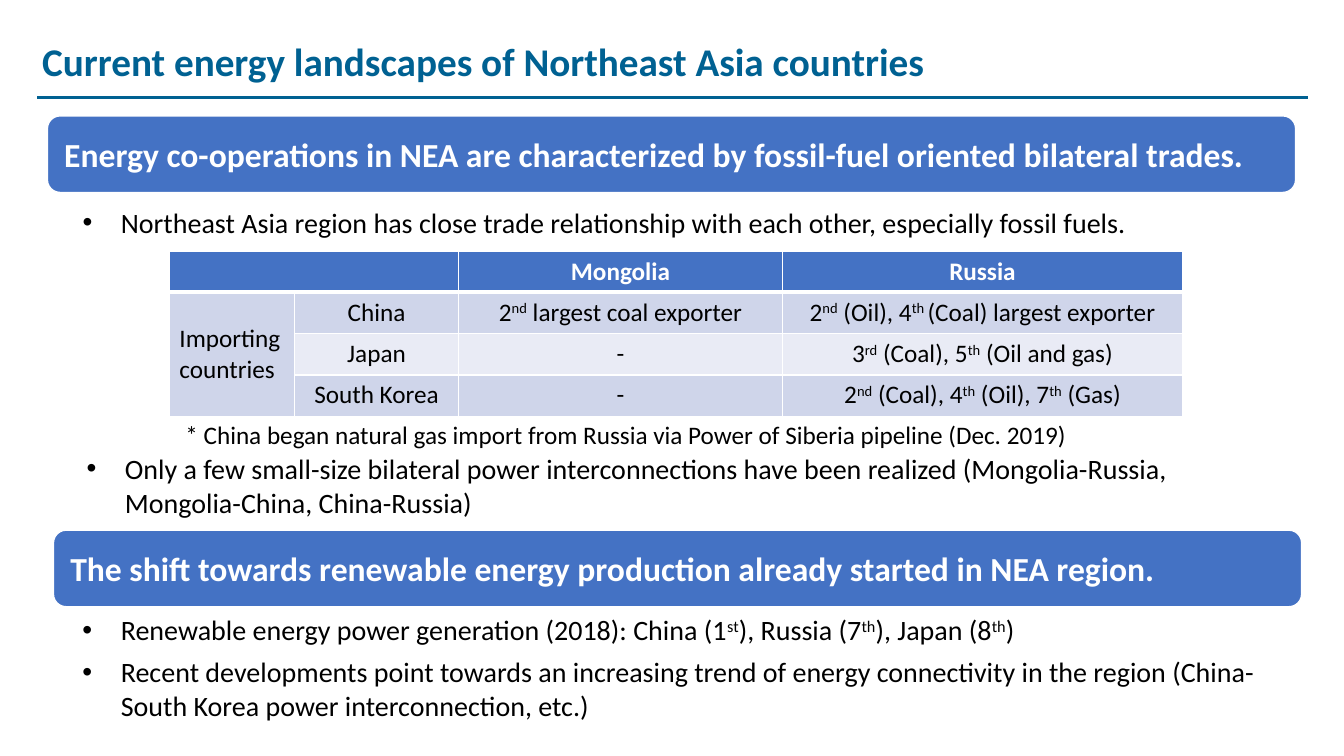
from pptx import Presentation
from pptx.dml.color import RGBColor
from pptx.enum.shapes import MSO_CONNECTOR, MSO_SHAPE
from pptx.enum.text import MSO_ANCHOR, PP_ALIGN
from pptx.oxml import parse_xml
from pptx.oxml.ns import nsdecls, qn
from pptx.util import Inches, Pt
from lxml import etree

TITLE = "Current energy landscapes of Northeast Asia countries"
BANNERS = [
    (0.47, 1.15, "Energy co-operations in NEA are characterized by fossil-fuel oriented bilateral trades."),
    (0.53, 5.26, "The shift towards renewable energy production already started in NEA region."),
]
BULLETS = [
    ((0.72, 1.99, 11.81, 0.47), [
        "Northeast Asia region has close trade relationship with each other, especially fossil fuels.",
    ]),
    ((0.76, 4.43, 11.81, 0.77), [
        "Only a few small-size bilateral power interconnections have been realized "
        "(Mongolia-Russia, Mongolia-China, China-Russia)",
    ]),
    ((0.72, 6.03, 11.96, 1.19), [
        "Renewable energy power generation (2018): China (1^st^), Russia (7^th^), Japan (8^th^)",
        "Recent developments point towards an increasing trend of energy connectivity in the region "
        "(China-South Korea power interconnection, etc.)",
    ]),
]
TRADES = [
    ["", "", "Mongolia", "Russia"],
    ["Importing countries", "China", "2^nd^ largest coal exporter",
     "2^nd^ (Oil), 4^th ^(Coal) largest exporter"],
    ["", "Japan", "-", "3^rd^ (Coal), 5^th^ (Oil and gas)"],
    ["", "South Korea", "-", "2^nd^ (Coal), 4^th^ (Oil), 7^th^ (Gas)"],
]
NOTE = "* China began natural gas import from Russia via Power of Siberia pipeline (Dec. 2019)"
WIDTHS = [1.24, 1.63, 3.21, 3.97]
ROW = 0.41

TEAL = RGBColor(0x00, 0x61, 0x92)
BLUE = RGBColor(0x44, 0x72, 0xC4)
DARK = RGBColor(0xCF, 0xD5, 0xEA)
PALE = RGBColor(0xE9, 0xEB, 0xF5)
WHITE = RGBColor(0xFF, 0xFF, 0xFF)
BLACK = RGBColor(0x00, 0x00, 0x00)
LEFT, CENTER = PP_ALIGN.LEFT, PP_ALIGN.CENTER
MIDDLE, TOP = MSO_ANCHOR.MIDDLE, MSO_ANCHOR.TOP
ROUND, STRAIGHT = MSO_SHAPE.ROUNDED_RECTANGLE, MSO_CONNECTOR.STRAIGHT


def style(size, color, bold=False):
    return {"name": "Calibri", "size": Pt(size), "bold": bold, "color": color}


HEAD = style(28, TEAL, True)
BANNER = style(24, WHITE, True)
BODY = style(20, BLACK)
SMALL = style(18, BLACK)
LABEL = style(18, WHITE, True)


def write(para, text, look, align=LEFT):
    para.alignment = align
    for i, part in enumerate(text.split("^")):
        if not part:
            continue
        run = para.add_run()
        run.text = part
        for key, value in look.items():
            if key == "color":
                run.font.color.rgb = value
            else:
                setattr(run.font, key, value)
        if i % 2:
            run._r.get_or_add_rPr().set("baseline", "30000")


def add_box(slide, box, anchor=TOP):
    frame = slide.shapes.add_textbox(*map(Inches, box)).text_frame
    frame.word_wrap = True
    frame.vertical_anchor = anchor
    return frame


def add_bullets(slide, box, lines):
    frame = add_box(slide, box)
    for i, line in enumerate(lines):
        para = frame.add_paragraph() if i else frame.paragraphs[0]
        props = para._p.get_or_add_pPr()
        props.set("marL", str(Inches(0.38)))
        props.set("indent", str(-Inches(0.38)))
        props.append(parse_xml(f'<a:buFont {nsdecls("a")} typeface="Arial"/>'))
        props.append(parse_xml(f'<a:buChar {nsdecls("a")} char="•"/>'))
        para.space_after = Pt(6)
        write(para, line, BODY)


def add_banner(slide, left, top, text):
    bar = slide.shapes.add_shape(ROUND, *map(Inches, (left, top, 12.38, 0.76)))
    bar.shadow.inherit = False
    bar.fill.solid()
    bar.fill.fore_color.rgb = BLUE
    bar.line.color.rgb = WHITE
    bar.line.width = Pt(1)
    frame = bar.text_frame
    frame.word_wrap = True
    frame.vertical_anchor = MIDDLE
    frame.margin_left = frame.margin_right = Inches(0.13)
    write(frame.paragraphs[0], text, BANNER)


def add_edges(cell, row):
    thick = {"T": row == 1, "B": row == 0}
    props = cell._tc.get_or_add_tcPr()
    for side in "LRTB":
        width = Pt(3 if thick.get(side) else 1)
        props.append(parse_xml(
            f'<a:ln{side} {nsdecls("a")} w="{width}"><a:solidFill>'
            f'<a:srgbClr val="{WHITE}"/></a:solidFill></a:ln{side}>'))


def add_trades(slide):
    size = (1.68, 2.49, sum(WIDTHS), ROW * len(TRADES))
    table = slide.shapes.add_table(len(TRADES), len(WIDTHS), *map(Inches, size)).table
    for col, width in zip(table.columns, WIDTHS):
        col.width = Inches(width)
    for r, line in enumerate(TRADES):
        table.rows[r].height = Inches(ROW)
        for c, text in enumerate(line):
            cell = table.cell(r, c)
            side = c == 0
            add_edges(cell, r)
            cell.fill.solid()
            cell.fill.fore_color.rgb = BLUE if r == 0 else DARK if r % 2 or side else PALE
            cell.vertical_anchor = MIDDLE if side else TOP
            write(cell.text_frame.paragraphs[0], text,
                  SMALL if r else LABEL, LEFT if side else CENTER)
    table.cell(0, 0).merge(table.cell(0, 1))
    table.cell(1, 0).merge(table.cell(3, 0))


def main():
    deck = Presentation()
    deck.slide_width, deck.slide_height = Inches(13.33), Inches(7.5)
    slide = deck.slides.add_slide(deck.slide_layouts[6])

    rule = slide.shapes.add_connector(STRAIGHT, *map(Inches, (0.37, 0.97, 12.97, 0.97)))
    rule.line.color.rgb = TEAL
    rule.line.width = Pt(2.25)
    etree.SubElement(rule._element.spPr, qn("a:effectLst"))

    title = add_box(slide, (0.32, 0.18, 12.61, 0.91), MIDDLE).paragraphs[0]
    title.line_spacing = 0.9
    write(title, TITLE, HEAD)
    add_trades(slide)
    for banner in BANNERS:
        add_banner(slide, *banner)
    for box, lines in BULLETS:
        add_bullets(slide, box, lines)
    write(add_box(slide, (1.74, 4.11, 10.28, 0.4)).paragraphs[0], NOTE, SMALL)
    deck.save("out.pptx")


if __name__ == "__main__":
    main()
